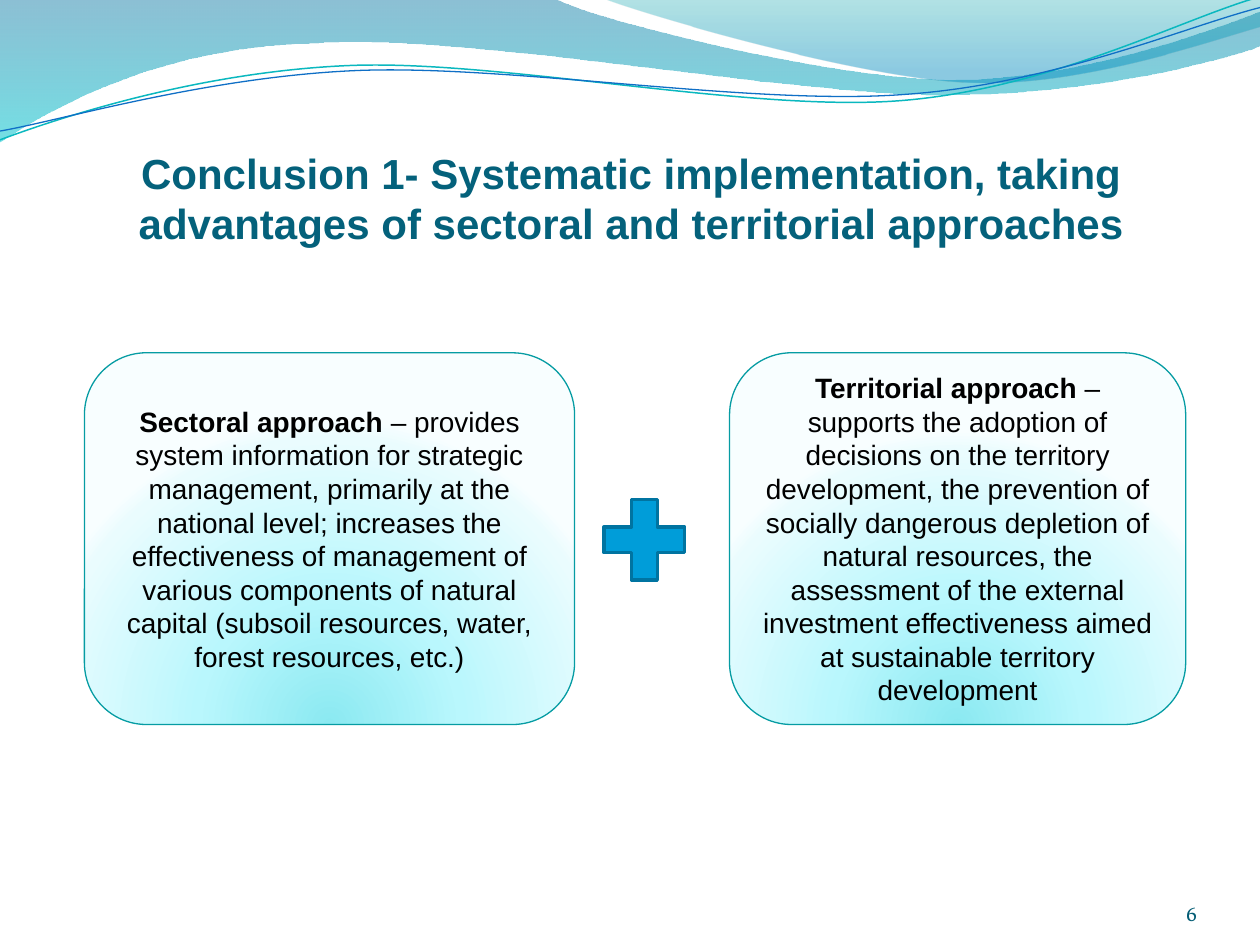
"""Build the conclusion slide that joins the sectoral and territorial approaches."""
import math
from dataclasses import dataclass
from typing import Optional

import pptx
import pptx.dml.color
import pptx.enum.shapes
import pptx.enum.text
import pptx.oxml
import pptx.oxml.ns
import pptx.util

Inches = pptx.util.Inches
Pt = pptx.util.Pt
RGBColor = pptx.dml.color.RGBColor
Shapes = pptx.enum.shapes.MSO_SHAPE
Align = pptx.enum.text.PP_ALIGN
Anchor = pptx.enum.text.MSO_ANCHOR
qualified = pptx.oxml.ns.qn

BLACK = RGBColor(0x00, 0x00, 0x00)
TITLE_TEAL = RGBColor(0x04, 0x61, 0x7B)
NUMBER_TEAL = RGBColor(0x04, 0x5D, 0x75)
CARD_EDGE = RGBColor(0x06, 0x9C, 0xA3)
PLUS_BLUE = RGBColor(0x00, 0x9D, 0xD9)
DEEP_BLUE = RGBColor(0x00, 0x74, 0xA1)
WAVE_CYAN = RGBColor(0x00, 0xC6, 0xCF)
WAVE_TEAL = RGBColor(0x00, 0xA1, 0xA9)
WAVE_BLUE = RGBColor(0x00, 0x8B, 0xBF)
LINE_TEAL = RGBColor(0x0A, 0xB8, 0xBF)
LINE_BLUE = RGBColor(0x0F, 0x6F, 0xC6)

DOWNWARD = '<a:lin ang="5400000" scaled="0"/>'
FROM_BELOW = ('<a:path path="circle"><a:fillToRect l="50000" t="130000" '
              'r="50000" b="-30000"/></a:path>')
LINE_TILT = -2.7
LINE_CENTER = (4.99, 0.58)


@dataclass
class Stop:
    position: int
    color: RGBColor
    opacity: int = 100


@dataclass
class Wave:
    start: tuple
    segments: list
    stops: Optional[list] = None
    line: Optional[RGBColor] = None
    width: float = 0


@dataclass
class Card:
    left: float
    width: float
    heading: str
    body: str


CARD_STOPS = [
    Stop(0, RGBColor(0x8B, 0xE9, 0xF1)),
    Stop(43, RGBColor(0xB9, 0xF7, 0xFD)),
    Stop(93, RGBColor(0xEA, 0xFC, 0xFE)),
    Stop(100, RGBColor(0xF8, 0xFE, 0xFF)),
]

WAVES = [
    Wave((0, 0), [(4.4, -0.01), (4.76, 0.17, 6.64, 0.63, 7.58, 0.63),
                  (8.53, 0.63, 9.58, 0.26, 10, 0.09), (10.01, 0.36),
                  (9.83, 0.44, 8.7, 0.76, 7.46, 0.75),
                  (6.22, 0.75, 3.82, 0.28, 2.57, 0.34),
                  (1.29, 0.36, 0.46, 0.83, -0.01, 1.13)],
         stops=[Stop(0, DEEP_BLUE, 45), Stop(100, WAVE_CYAN, 55)]),
    Wave((4.79, -0.01), [(5.09, 0.11, 6.82, 0.62, 7.69, 0.65),
                         (8.56, 0.69, 9.61, 0.32, 10, 0.21), (10, 0)],
         stops=[Stop(0, WAVE_TEAL, 30), Stop(80, WAVE_BLUE, 45)]),
    Wave((0, 1.11), [(0.48, 0.93, 1.58, 0.57, 2.77, 0.52),
                     (3.95, 0.47, 5.93, 0.89, 7.13, 0.8),
                     (8.33, 0.71, 9.38, 0.15, 9.98, -0.02)],
         line=LINE_TEAL, width=0.85),
    Wave((0, 1.04), [(0.47, 0.96, 1.64, 0.61, 2.83, 0.56),
                     (4.03, 0.51, 5.97, 0.84, 7.17, 0.75),
                     (8.36, 0.67, 9.41, 0.21, 10, 0.06)],
         line=LINE_BLUE, width=0.75),
]

CARDS = [
    Card(0.67, 3.89, "Sectoral approach ",
         "– provides system information for strategic management, primarily at "
         "the national level; increases the effectiveness of management of various "
         "components of natural capital (subsoil resources, water, forest "
         "resources, etc.)"),
    Card(5.79, 3.62, "Territorial approach ",
         "– supports the adoption of decisions on the territory development, the "
         "prevention of socially dangerous depletion of natural resources, the "
         "assessment of the external investment effectiveness aimed at "
         "sustainable territory development"),
]


def fill_gradient(shape, stops: list, direction: str) -> None:
    """Fill a shape with a gradient."""
    shape.fill.background()
    marks = "".join(f'<a:gs pos="{stop.position * 1000}"><a:srgbClr val="{stop.color}">'
                    f'<a:alpha val="{stop.opacity * 1000}"/></a:srgbClr></a:gs>'
                    for stop in stops)
    gradient = pptx.oxml.parse_xml(
        f'<a:gradFill {pptx.oxml.ns.nsdecls("a")} rotWithShape="1">'
        f'<a:gsLst>{marks}</a:gsLst>{direction}</a:gradFill>')
    properties = shape._element.spPr
    properties.replace(properties.find(qualified("a:noFill")), gradient)


def set_line(shape, color: RGBColor, width: float) -> None:
    """Give a shape a solid outline."""
    shape.line.color.rgb = color
    shape.line.width = Pt(width)


def write_text(shape, spans: list, *, size: float, color: RGBColor, font: str = "Arial",
               align=Align.CENTER, anchor=Anchor.MIDDLE,
               insets: Optional[tuple] = None) -> None:
    """Write one paragraph of (text, bold) spans into a shape."""
    frame = shape.text_frame
    frame.word_wrap = True
    frame.vertical_anchor = anchor
    if insets:
        (frame.margin_left, frame.margin_top,
         frame.margin_right, frame.margin_bottom) = map(Inches, insets)
    para = frame.paragraphs[0]
    para.alignment = align
    for text, bold in spans:
        span = para.add_run()
        span.text = text
        span.font.name = font
        span.font.size = Pt(size)
        span.font.bold = bold
        span.font.color.rgb = color


def turn_back(point: tuple) -> tuple:
    """Return where a point of a tilted line lies before the tilt."""
    angle = math.radians(-LINE_TILT)
    across, down = (value - middle for value, middle in zip(point, LINE_CENTER))
    return (LINE_CENTER[0] + across * math.cos(angle) - down * math.sin(angle),
            LINE_CENTER[1] + across * math.sin(angle) + down * math.cos(angle))


def bend_segments(shape, segments: list) -> None:
    """Turn each run of three control points into one cubic curve."""
    steps = iter(list(shape._element.iter(qualified("a:lnTo"))))
    for segment in segments:
        first = next(steps)
        if len(segment) == 6:
            first.tag = qualified("a:cubicBezTo")
            for _ in range(2):
                control = next(steps)
                first.append(control[0])
                control.getparent().remove(control)


def draw_wave(page, wave: Wave) -> None:
    """Draw a filled band or a thin tilted curve."""
    points = [wave.start]
    for segment in wave.segments:
        points += zip(segment[::2], segment[1::2])
    if wave.line:
        points = [turn_back(point) for point in points]
    corners = [(Inches(x), Inches(y)) for x, y in points]
    builder = page.shapes.build_freeform(*corners[0])
    builder.add_line_segments(corners[1:], close=wave.stops is not None)
    shape = builder.convert_to_shape()
    bend_segments(shape, wave.segments)
    shape.shadow.inherit = False
    if wave.stops:
        fill_gradient(shape, wave.stops, DOWNWARD)
        shape.line.fill.background()
    else:
        shape.rotation = LINE_TILT
        shape.fill.background()
        set_line(shape, wave.line, wave.width)


def draw_card(page, card: Card) -> None:
    """Draw a rounded card with a bold heading and its explanation."""
    box = page.shapes.add_shape(Shapes.ROUNDED_RECTANGLE, Inches(card.left),
                                Inches(2.8), Inches(card.width), Inches(2.95))
    box.shadow.inherit = False
    fill_gradient(box, CARD_STOPS, FROM_BELOW)
    set_line(box, CARD_EDGE, 0.75)
    write_text(box, [(card.heading, True), (card.body, False)], size=16, color=BLACK)


def draw_plus(page) -> None:
    """Draw the plus sign between the cards."""
    plus = page.shapes.add_shape(Shapes.MATH_PLUS, Inches(4.68), Inches(3.85),
                                 Inches(0.87), Inches(0.87))
    plus.shadow.inherit = False
    plus.fill.solid()
    plus.fill.fore_color.rgb = PLUS_BLUE
    set_line(plus, DEEP_BLUE, 2)


def main() -> None:
    """Build and save the deck."""
    deck = pptx.Presentation()
    deck.slide_width, deck.slide_height = Inches(10), Inches(7.5)
    page = deck.slides.add_slide(deck.slide_layouts[6])
    for wave in WAVES:
        draw_wave(page, wave)
    title = page.shapes.add_textbox(Inches(0.51), Inches(0.92), Inches(9), Inches(1.25))
    write_text(title, [("Conclusion 1- Systematic implementation, taking advantages of "
                        "sectoral and territorial approaches", True)],
               size=24, color=TITLE_TEAL, insets=(0, 0.05, 0, 0))
    number = page.shapes.add_textbox(Inches(8.67), Inches(6.95), Inches(0.83), Inches(0.4))
    write_text(number, [("6", False)], size=12, color=NUMBER_TEAL, font="Vollkorn",
               align=Align.RIGHT, anchor=Anchor.BOTTOM, insets=(0, 0, 0, 0))
    for card in CARDS:
        draw_card(page, card)
    draw_plus(page)
    deck.save("out.pptx")


if __name__ == "__main__":
    main()
